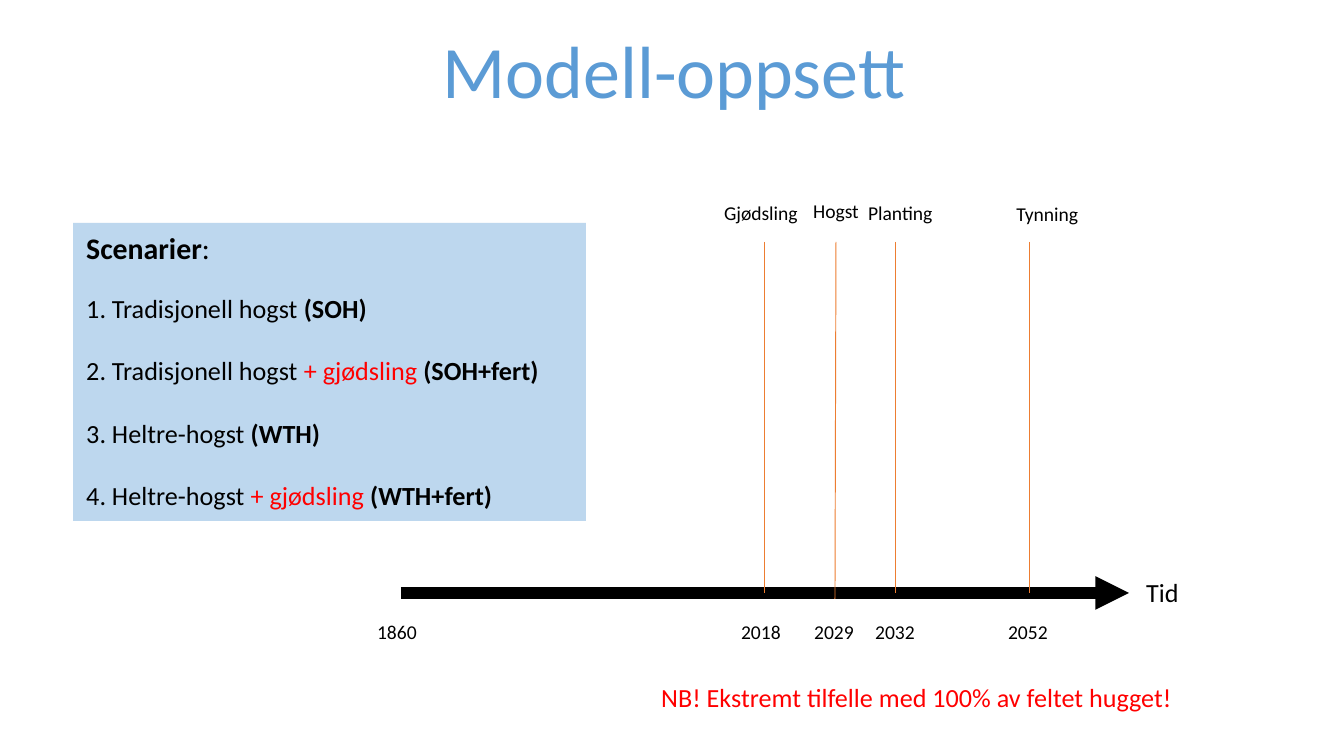
"""Build the slide with the model set-up: scenarios beside a time line."""
from lxml import etree
from pptx import Presentation
from pptx.dml.color import RGBColor
from pptx.enum.shapes import MSO_CONNECTOR, MSO_SHAPE
from pptx.enum.text import MSO_ANCHOR, MSO_AUTO_SIZE, PP_ALIGN
from pptx.oxml.ns import qn
from pptx.util import Emu, Pt

LINE = MSO_CONNECTOR.STRAIGHT
RECT = MSO_SHAPE.RECTANGLE
TOP, MIDDLE = MSO_ANCHOR.TOP, MSO_ANCHOR.MIDDLE
LEFT, CENTER = PP_ALIGN.LEFT, PP_ALIGN.CENTER
FIT, FIXED = MSO_AUTO_SIZE.SHAPE_TO_FIT_TEXT, MSO_AUTO_SIZE.NONE

BLACK = RGBColor(0x00, 0x00, 0x00)
RED = RGBColor(0xFF, 0x00, 0x00)
BLUE = RGBColor(0x5B, 0x9B, 0xD5)
PALE = RGBColor(0xBD, 0xD7, 0xEE)
ORANGE = RGBColor(0xED, 0x7D, 0x31)
FONT = "Calibri"

TITLE = "Modell-oppsett"
HEAD = "Scenarier"
EXTRA = "+ gjødsling "
SCENES = [
    ("Tradisjonell hogst ", "", "(SOH)"),
    ("Tradisjonell hogst ", EXTRA, "(SOH+fert)"),
    ("Heltre-hogst ", "", "(WTH)"),
    ("Heltre-hogst ", EXTRA, "(WTH+fert)"),
]
YEARS = [("1860", 364), ("2018", 728), ("2029", 801), ("2032", 862), ("2052", 995)]
EVENTS = [
    ("Gjødsling", (711, 194, 102), (765, 765, 593)),
    ("Hogst", (800, 192, 74), (836, 835, 599)),
    ("Planting", (855, 194, 93), (895, 895, 593)),
    ("Tynning", (1003, 195, 108), (1030, 1030, 593)),
]
AXIS = "Tid"
NOTE = "NB! Ekstremt tilfelle med 100% av feltet hugget!"
AXIS_Y = 593


def px(num):
    return Emu(round(num * 914400 / 134.4))


def write(par, text, size=10.5, color=BLACK, bold=False):
    run = par.add_run()
    run.text = text
    font = run.font
    font.name, font.size, font.bold = FONT, Pt(size), bold
    font.color.rgb = color


def label(slide, text, box, **form):
    frame = slide.shapes.add_textbox(*map(px, box)).text_frame
    frame.word_wrap = False
    frame.auto_size = FIT
    write(frame.paragraphs[0], text, **form)


def draw(slide, ends, color, width):
    line = slide.shapes.add_connector(LINE, *map(px, ends))
    line.line.color.rgb = color
    line.line.width = Pt(width)
    etree.SubElement(line._element.spPr, qn("a:effectLst"))
    return line


def add_title(slide):
    title = slide.shapes.title
    title.left, title.top, title.width, title.height = map(px, (71, 26, 1206, 98))
    frame = title.text_frame
    frame.auto_size, frame.vertical_anchor = FIXED, MIDDLE
    frame.margin_left = frame.margin_right = px(10)
    frame.margin_top = frame.margin_bottom = px(5)
    par = frame.paragraphs[0]
    par.alignment, par.line_spacing = CENTER, 0.9
    write(par, TITLE, size=39.6, color=BLUE)


def add_scenes(slide):
    box = slide.shapes.add_shape(RECT, *map(px, (73, 223, 513, 298)))
    box.shadow.inherit = False
    box.fill.solid()
    box.fill.fore_color.rgb = PALE
    box.line.fill.background()
    frame = box.text_frame
    frame.word_wrap, frame.auto_size, frame.vertical_anchor = True, FIT, TOP
    par = frame.paragraphs[0]
    par.alignment = LEFT
    write(par, HEAD, size=16, bold=True)
    write(par, ":", size=16)
    for num, (name, extra, code) in enumerate(SCENES, 1):
        par = frame.add_paragraph()
        par.alignment = LEFT
        par.space_before = Pt(14.6 if num == 1 else 16.5)
        write(par, f"{num}. {name}", size=14)
        if extra:
            write(par, extra, size=14, color=RED)
        write(par, code, size=14, bold=True)


def add_times(slide):
    axis = draw(slide, (401, AXIS_Y, 1129, AXIS_Y), BLACK, 6)
    etree.SubElement(axis.line._get_or_add_ln(), qn("a:tailEnd"), type="triangle")
    for year, left in YEARS:
        label(slide, year, (left, 613, 67, 38))
    for name, (left, top, width), (start, end, foot) in EVENTS:
        draw(slide, (start, 242, end, foot), ORANGE, 0.5)
        label(slide, name, (left, top, width, 38))
    label(slide, AXIS, (1133, 570, 60, 46), size=14)
    label(slide, NOTE, (648, 675, 558, 46), size=14, color=RED)


def main():
    deck = Presentation()
    deck.slide_width, deck.slide_height = px(1344), px(756)
    slide = deck.slides.add_slide(deck.slide_layouts[5])
    add_title(slide)
    add_times(slide)
    add_scenes(slide)
    deck.save("out.pptx")


if __name__ == "__main__":
    main()
